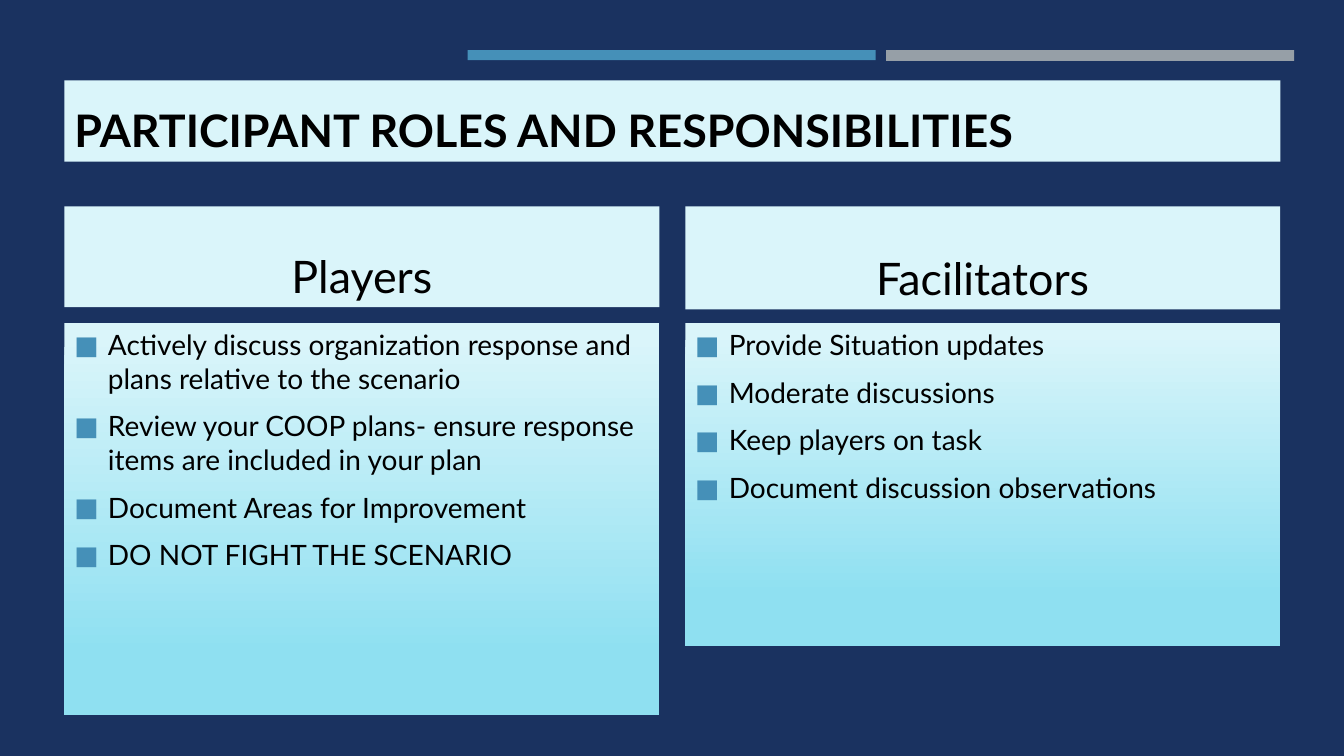
from lxml.etree import SubElement
from pptx import Presentation
from pptx.dml.color import RGBColor
from pptx.enum.shapes import MSO_SHAPE
from pptx.enum.text import MSO_ANCHOR, PP_ALIGN
from pptx.oxml.ns import qn
from pptx.util import Pt

NAVY = RGBColor(0x1A, 0x32, 0x60)
BLUE = RGBColor(0x45, 0x90, 0xB8)
GRAY = RGBColor(0x96, 0x9F, 0xA7)
PALE = RGBColor(0xDA, 0xF5, 0xFA)
AQUA = RGBColor(0x8F, 0xE0, 0xF1)
BLACK = RGBColor(0, 0, 0)

LEFT = 46
COLUMN_WIDTH = 425
COLUMN_STEP = 443.5
HEADING_TOP = 147.5
LIST_TOP = 230.5
LIST_INDENT = 24

COLUMNS = [
    ("Players", 72, 280, 0.04, [
        "Actively discuss organization response and plans relative to the scenario",
        "Review your COOP plans- ensure response items are included in your plan",
        "Document Areas for Improvement",
        "DO NOT FIGHT THE SCENARIO",
    ]),
    ("Facilitators", 73.5, 231, 0.03, [
        "Provide Situation updates",
        "Moderate discussions",
        "Keep players on task",
        "Document discussion observations",
    ]),
]


def add_box(left, top, width, height, color):
    shape = slide.shapes.add_shape(
        MSO_SHAPE.RECTANGLE, Pt(left), Pt(top), Pt(width), Pt(height))
    shape.shadow.inherit = False
    shape.fill.solid()
    shape.fill.fore_color.rgb = color
    shape.line.fill.background()
    return shape


def write_text(shape, lines, size, anchor, alignment=PP_ALIGN.LEFT, bold=False):
    text_frame = shape.text_frame
    text_frame.text = "\n".join(lines)
    text_frame.word_wrap = True
    text_frame.vertical_anchor = anchor
    for paragraph in text_frame.paragraphs:
        paragraph.alignment = alignment
        paragraph.space_before = Pt(size * 0.2)
        paragraph.space_after = Pt(6)
        font = paragraph.runs[0].font
        font.name = "Lato"
        font.size = Pt(size)
        font.bold = bold
        font.color.rgb = BLACK


presentation = Presentation()
presentation.slide_width = Pt(960)
presentation.slide_height = Pt(540)
slide = presentation.slides.add_slide(presentation.slide_layouts[6])
slide.background.fill.solid()
slide.background.fill.fore_color.rgb = NAVY

add_box(633, 35.75, 291.5, 7.75, GRAY)
add_box(334, 35.75, 291.5, 7.25, BLUE)

title = add_box(LEFT, 57.5, COLUMN_STEP + COLUMN_WIDTH, 58, PALE)
write_text(title, ["PARTICIPANT ROLES AND RESPONSIBILITIES"], 32,
           MSO_ANCHOR.BOTTOM, bold=True)

for index, (role, heading_height, list_height, fade_start, duties) in enumerate(COLUMNS):
    left = LEFT + index * COLUMN_STEP
    heading = add_box(left, HEADING_TOP, COLUMN_WIDTH, heading_height, PALE)
    write_text(heading, [role], 32, MSO_ANCHOR.BOTTOM, PP_ALIGN.CENTER)

    duty_list = add_box(left, LIST_TOP, COLUMN_WIDTH, list_height, PALE)
    duty_list.fill.gradient()
    duty_list.fill.gradient_angle = 270
    fade = [(fade_start, PALE), (0.84, AQUA)]
    for stop, (position, color) in zip(duty_list.fill.gradient_stops, fade):
        stop.position = position
        stop.color.rgb = color

    write_text(duty_list, duties, 20, MSO_ANCHOR.TOP)
    for paragraph in duty_list.text_frame.paragraphs:
        properties = paragraph._p.get_or_add_pPr()
        properties.set("marL", str(Pt(LIST_INDENT)))
        properties.set("indent", str(-Pt(LIST_INDENT)))
        bullet_color = SubElement(properties, qn("a:buClr"))
        SubElement(bullet_color, qn("a:srgbClr"), val=str(BLUE))
        SubElement(properties, qn("a:buSzPct"), val="92000")
        SubElement(properties, qn("a:buFont"), typeface="Lato")
        SubElement(properties, qn("a:buChar"), char="■")

presentation.save("out.pptx")
